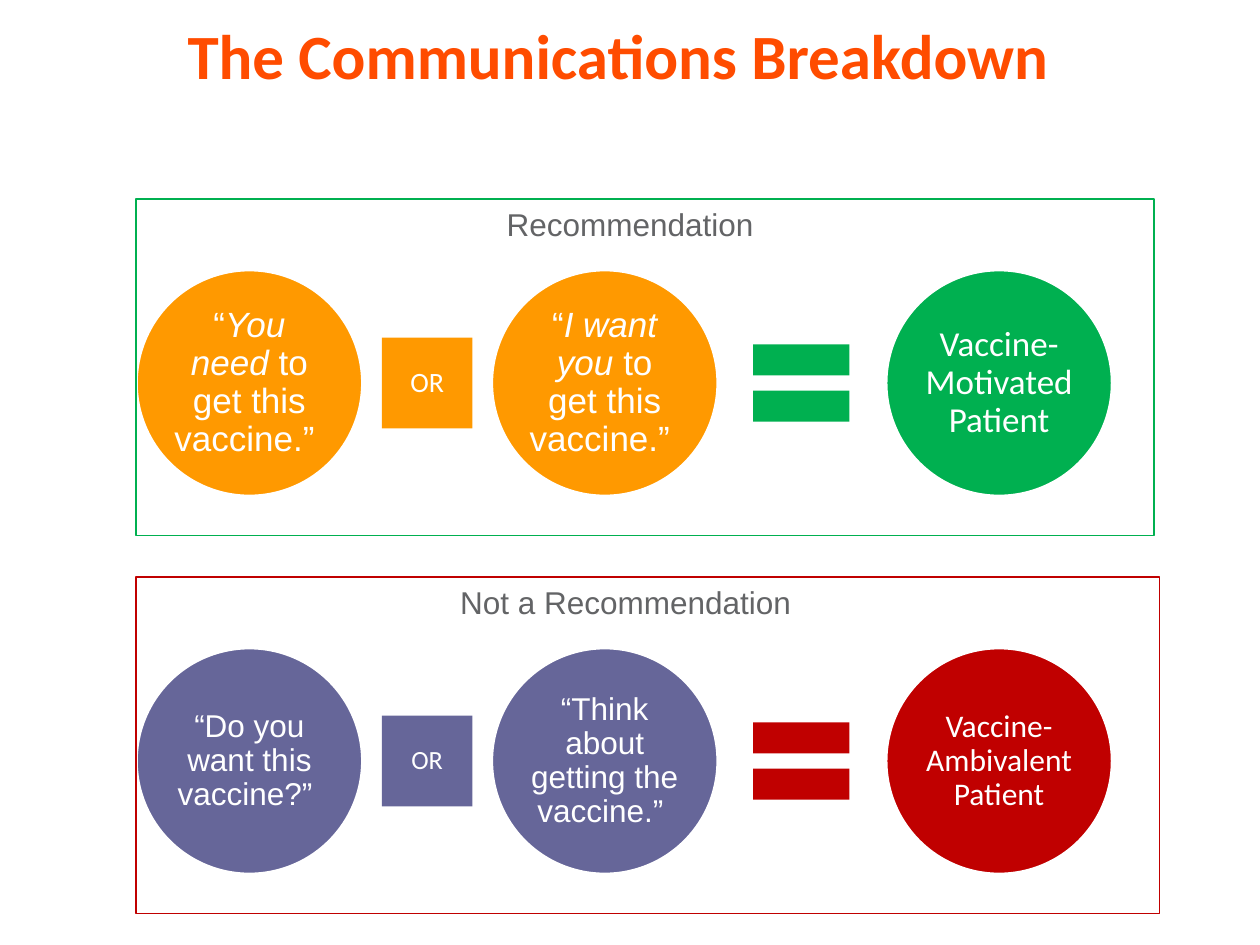
from pptx import Presentation
from pptx.dml.color import RGBColor
from pptx.enum.shapes import MSO_SHAPE
from pptx.enum.text import MSO_ANCHOR, PP_ALIGN
from pptx.util import Inches, Pt

OVAL, RECTANGLE, EQUALS = MSO_SHAPE.OVAL, MSO_SHAPE.RECTANGLE, MSO_SHAPE.MATH_EQUAL
TOP, MIDDLE = MSO_ANCHOR.TOP, MSO_ANCHOR.MIDDLE
LEFT, CENTER = PP_ALIGN.LEFT, PP_ALIGN.CENTER


def add_shape(shapes, kind, left, top, width, height, fill=None, line=None, weight=2):
    shape = shapes.add_shape(kind, Inches(left), Inches(top), Inches(width), Inches(height))
    shape.shadow.inherit = False
    for paint, color in ((shape.fill, fill), (shape.line.fill, line)):
        if color:
            paint.solid()
            paint.fore_color.rgb = RGBColor.from_string(color)
        else:
            paint.background()
    if line:
        shape.line.width = Pt(weight)
    return shape


def write(shape, text, size, font="Arial", color="FFFFFF", bold=False, italic="",
          align=CENTER, anchor=MIDDLE, inset=0.03, spacing=0.9):
    frame = shape.text_frame
    frame.word_wrap = True
    frame.vertical_anchor = anchor
    frame.margin_left = frame.margin_right = Inches(inset)
    frame.margin_top = frame.margin_bottom = Inches(min(inset, 0.05))
    para = frame.paragraphs[0]
    para.alignment = align
    para.line_spacing = spacing
    before, slanted, after = text.partition(italic) if italic else (text, "", "")
    for part in (before, slanted, after):
        if part:
            span = para.add_run()
            span.text = part
            span.font.name = font
            span.font.size = Pt(size)
            span.font.bold = bold
            span.font.italic = part == slanted
            span.font.color.rgb = RGBColor.from_string(color)


deck = Presentation()
deck.slide_width, deck.slide_height = Inches(10), Inches(7.5)
page = deck.slides.add_slide(deck.slide_layouts[6])

title = page.shapes.add_textbox(Inches(1.39), Inches(0.08), Inches(8.61), Inches(1))
write(title, "The Communications Breakdown", 36, font="Calibri", color="FF4C00", bold=True,
      align=LEFT, anchor=TOP, inset=0.1, spacing=1)

panels = [
    {"top": 1.58, "width": 8.08, "label": "Recommendation",
     "phrase_color": "FF9900", "result_color": "00B050", "size": 20, "or_size": 16,
     "phrases": [("“You need to get this vaccine.” ", "You need"),
                 ("“I want you to get this vaccine.” ", "I want you ")],
     "result": "Vaccine-Motivated Patient"},
    {"top": 4.58, "width": 8.12, "label": "Not a Recommendation ",
     "phrase_color": "666699", "result_color": "C00000", "size": 18, "or_size": 15,
     "phrases": [("“Do you want this vaccine?” ", ""),
                 ("“Think about getting the vaccine.” ", "")],
     "result": "Vaccine-Ambivalent Patient"},
]

for panel in panels:
    top = panel["top"]
    phrase_color, result_color = panel["phrase_color"], panel["result_color"]
    equation = page.shapes.add_group_shape().shapes

    for left, (phrase, italic) in zip((1.08, 3.9), panel["phrases"]):
        circle = add_shape(equation, OVAL, left, top + 0.56, 1.8, 1.8, phrase_color, "FFFFFF")
        write(circle, phrase, panel["size"], italic=italic)

    either = add_shape(equation, RECTANGLE, 3.03, top + 1.1, 0.72, 0.72, phrase_color)
    write(either, "OR", panel["or_size"], font="Calibri", inset=0)

    add_shape(equation, EQUALS, 5.84, top + 0.94, 1.04, 1.04, result_color)
    result = add_shape(equation, OVAL, 7.03, top + 0.56, 1.8, 1.8, result_color, "FFFFFF")
    write(result, panel["result"], panel["size"], font="Calibri")

    add_shape(page.shapes, RECTANGLE, 1.08, top, panel["width"], 2.67,
              line=result_color, weight=0.75)
    label = page.shapes.add_textbox(Inches(2.79), Inches(top), Inches(4.42), Inches(0.7))
    write(label, panel["label"], 18, color="636466", anchor=TOP, inset=0.1, spacing=1)

deck.save("out.pptx")
